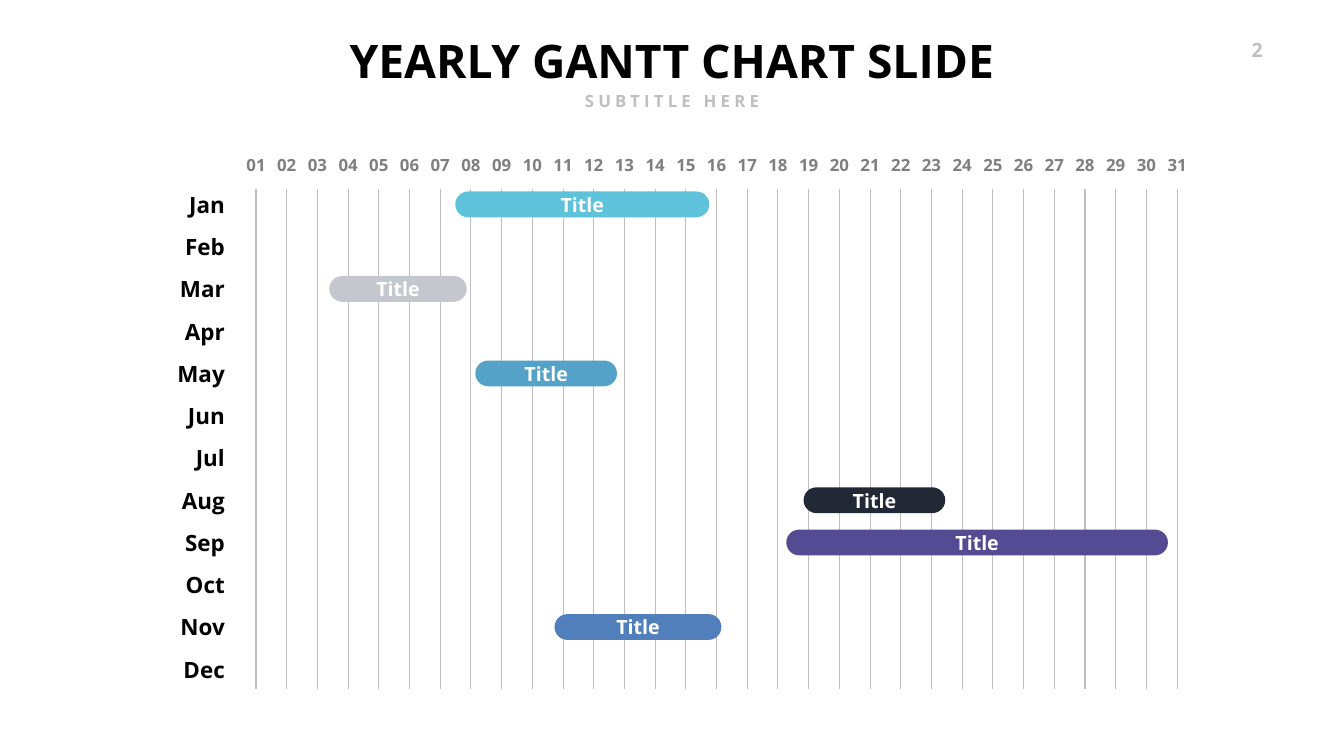
from lxml.etree import SubElement
from pptx import Presentation
from pptx.dml.color import RGBColor
from pptx.enum.shapes import MSO_CONNECTOR, MSO_SHAPE
from pptx.enum.text import MSO_ANCHOR, MSO_AUTO_SIZE, PP_ALIGN
from pptx.oxml.ns import qn
from pptx.util import Cm, Pt

TITLE = "YEARLY GANTT CHART SLIDE"
SUBTITLE = "SUBTITLE HERE"
PAGE_NUMBER = "2"
MONTHS = ["Jan", "Feb", "Mar", "Apr", "May", "Jun",
          "Jul", "Aug", "Sep", "Oct", "Nov", "Dec"]
DAYS = [f"{day:02}" for day in range(1, 32)]
# month, label, left and width in cm, fill
TASKS = [
    ("Jan", "Title", 22.94, 12.8, "5DC2DA"),
    ("Mar", "Title", 16.59, 6.93, "C4C8CE"),
    ("May", "Title", 23.95, 7.14, "54A2C8"),
    ("Aug", "Title", 40.49, 7.14, "232836"),
    ("Sep", "Title", 39.62, 19.23, "544B92"),
    ("Nov", "Title", 27.94, 8.41, "507FBB"),
]

FONT = "Open Sans"
BLACK, WHITE, GRAY, LIGHT_GRAY = "000000", "FFFFFF", "7F7F7F", "BFBFBF"

# Lengths in cm
SLIDE_WIDTH, SLIDE_HEIGHT = 67.72, 38.1
FIRST_DAY_X, LAST_DAY_X = 12.9, 59.31
DAY_STEP = (LAST_DAY_X - FIRST_DAY_X) / (len(DAYS) - 1)
GRID_TOP, GRID_BOTTOM = 9.5, 34.7
FIRST_MONTH_Y, LAST_MONTH_Y = 10.3, 33.73
MONTH_STEP = (LAST_MONTH_Y - FIRST_MONTH_Y) / (len(MONTHS) - 1)
MONTH_RIGHT, MONTH_WIDTH = 11.33, 3
BAR_HEIGHT = 1.3


def color(hex_value):
    return RGBColor.from_string(hex_value)


def month_y(month):
    return FIRST_MONTH_Y + MONTHS.index(month) * MONTH_STEP


def write(shape, text, size, hex_color, align=PP_ALIGN.CENTER, spacing=0):
    """Fill a shape with one bold line; spacing is between letters, in points."""
    frame = shape.text_frame
    frame.text = text
    frame.auto_size = MSO_AUTO_SIZE.NONE
    frame.word_wrap = True
    frame.vertical_anchor = MSO_ANCHOR.MIDDLE
    frame.margin_left = frame.margin_right = frame.margin_top = frame.margin_bottom = 0
    paragraph = frame.paragraphs[0]
    paragraph.alignment = align
    run = paragraph.runs[0]
    run.font.name = FONT
    run.font.size = Pt(size)
    run.font.bold = True
    run.font.color.rgb = color(hex_color)
    if spacing:
        run._r.get_or_add_rPr().set("spc", str(spacing * 100))


def add_label(slide, left, middle, width, height, *style, **options):
    """Add a text box centred vertically on middle."""
    box = slide.shapes.add_textbox(
        Cm(left), Cm(middle - height / 2), Cm(width), Cm(height))
    write(box, *style, **options)


def add_grid_line(slide, x):
    line = slide.shapes.add_connector(
        MSO_CONNECTOR.STRAIGHT, Cm(x), Cm(GRID_TOP), Cm(x), Cm(GRID_BOTTOM))
    line.line.color.rgb = color(LIGHT_GRAY)
    line.line.width = Pt(1.5)
    SubElement(line._element.spPr, qn("a:effectLst"))


def add_bar(slide, month, label, left, width, fill):
    bar = slide.shapes.add_shape(
        MSO_SHAPE.ROUNDED_RECTANGLE, Cm(left), Cm(month_y(month) - BAR_HEIGHT / 2),
        Cm(width), Cm(BAR_HEIGHT))
    bar.adjustments[0] = 0.5
    bar.shadow.inherit = False
    bar.fill.solid()
    bar.fill.fore_color.rgb = color(fill)
    bar.line.fill.background()
    write(bar, label, 28, WHITE)


def add_heading(slide):
    title = slide.shapes.title
    title.left, title.top, title.width, title.height = (
        Cm(10), Cm(1.3), Cm(SLIDE_WIDTH - 20), Cm(3.42))
    write(title, TITLE, 66, BLACK)
    add_label(slide, 25, 5.1, SLIDE_WIDTH - 50, 1.27,
              SUBTITLE, 24, LIGHT_GRAY, spacing=6)
    add_label(slide, 61.63, 2.5, 2, 1.45,
              PAGE_NUMBER, 28, LIGHT_GRAY, align=PP_ALIGN.RIGHT, spacing=3)


def main():
    presentation = Presentation()
    presentation.slide_width = Cm(SLIDE_WIDTH)
    presentation.slide_height = Cm(SLIDE_HEIGHT)
    slide = presentation.slides.add_slide(presentation.slide_layouts[5])

    add_heading(slide)
    for month in MONTHS:
        add_label(slide, MONTH_RIGHT - MONTH_WIDTH, month_y(month), MONTH_WIDTH, 1.63,
                  month, 32, BLACK, align=PP_ALIGN.RIGHT)
    for index, day in enumerate(DAYS):
        x = FIRST_DAY_X + index * DAY_STEP
        add_label(slide, x - DAY_STEP / 2, 8.33, DAY_STEP, 1.27, day, 24, GRAY)
        add_grid_line(slide, x)
    for task in TASKS:
        add_bar(slide, *task)

    presentation.save("out.pptx")


if __name__ == "__main__":
    main()
